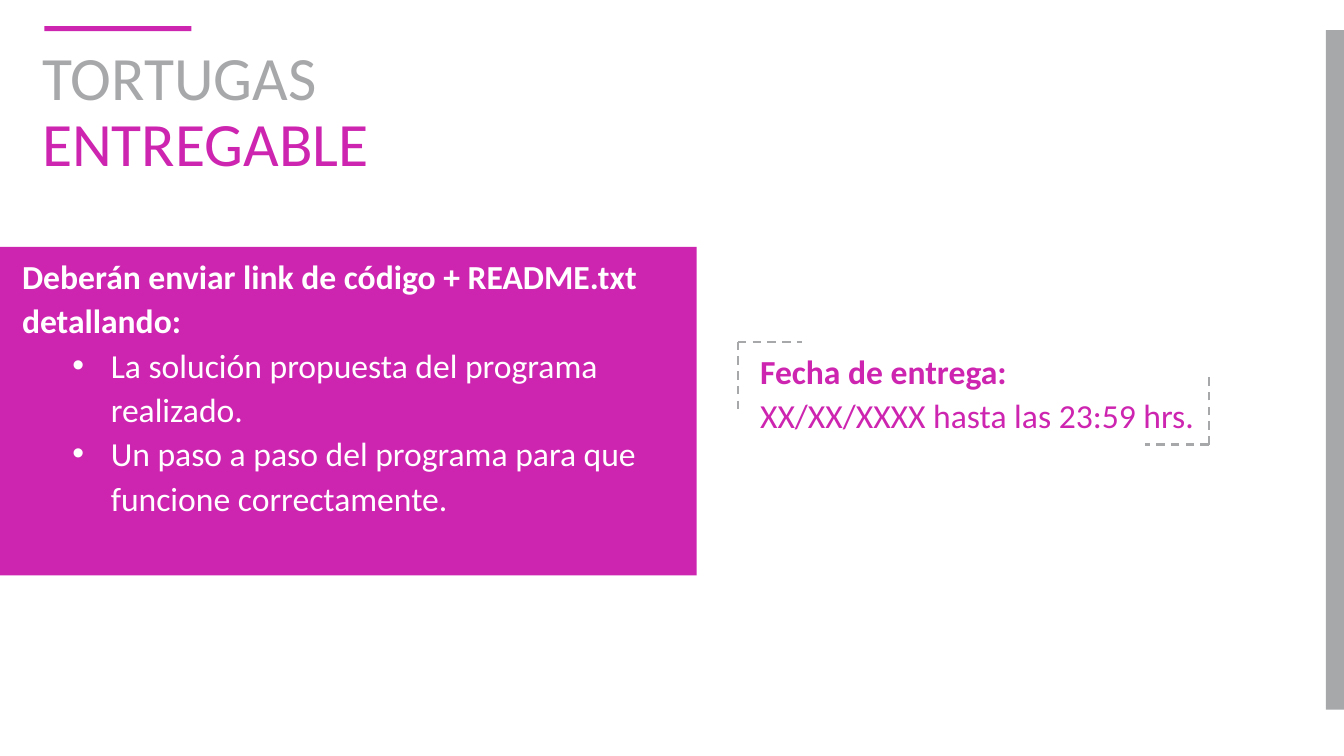
from dataclasses import dataclass

from lxml.etree import SubElement
from pptx import Presentation
from pptx.dml.color import RGBColor
from pptx.enum.dml import MSO_LINE_DASH_STYLE as DashStyle
from pptx.enum.shapes import MSO_CONNECTOR as Connector, MSO_SHAPE as Shape
from pptx.enum.text import MSO_ANCHOR as Anchor, PP_ALIGN as Align
from pptx.oxml.ns import qn
from pptx.util import Inches, Pt


@dataclass(frozen=True)
class Theme:
    """Colours, font and type sizes of the slide."""
    magenta: str = "CD25B0"
    gray: str = "A7A8AA"
    white: str = "FFFFFF"
    font: str = "Calibri"
    title_size: int = 44
    body_size: int = 24


THEME = Theme()


def add_bar(slide, left, top, width, height, color):
    """Add a plain filled rectangle."""
    bar = slide.shapes.add_shape(
        Shape.RECTANGLE, Inches(left), Inches(top), Inches(width), Inches(height))
    bar.shadow.inherit = False
    bar.fill.solid()
    bar.fill.fore_color.rgb = RGBColor.from_string(color)
    bar.line.fill.background()


def add_text(slide, left, top, width, height, text):
    """Add a wrapping text box and return its text frame."""
    box = slide.shapes.add_textbox(
        Inches(left), Inches(top), Inches(width), Inches(height))
    frame = box.text_frame
    frame.word_wrap = True
    frame.text = text
    return frame


def format_run(run, size, color, bold=False):
    """Apply the theme font to a run."""
    run.font.name = THEME.font
    run.font.size = Pt(size)
    run.font.bold = bold
    run.font.color.rgb = RGBColor.from_string(color)


def format_paragraph(paragraph, color, bold=False, margin=0.12, indent=0):
    """Format a body paragraph with its spacing and indents."""
    paragraph.alignment = Align.LEFT
    paragraph.line_spacing = 1.1
    properties = paragraph._p.get_or_add_pPr()
    properties.set("marL", str(Inches(margin)))
    properties.set("indent", str(Inches(indent)))
    for run in paragraph.runs:
        format_run(run, THEME.body_size, color, bold)


def add_bullet(paragraph, color):
    """Give a paragraph a round bullet in the given colour."""
    paragraph.level = 1
    properties = paragraph._p.get_or_add_pPr()
    SubElement(SubElement(properties, qn("a:buClr")), qn("a:srgbClr")).set("val", color)
    SubElement(properties, qn("a:buFont")).set("typeface", "Arial")
    SubElement(properties, qn("a:buChar")).set("char", "•")


def add_dashed_line(slide, start, end):
    """Add a dashed gray line between two points."""
    line = slide.shapes.add_connector(
        Connector.STRAIGHT, *(Inches(value) for value in (*start, *end)))
    line.line.color.rgb = RGBColor.from_string(THEME.gray)
    line.line.width = Pt(1.5)
    line.line.dash_style = DashStyle.DASH
    SubElement(line._element.spPr, qn("a:effectLst"))


def add_heading(slide, left, top, width, height):
    """Add the two-colour title with its accent bar above."""
    frame = add_text(slide, left, top, width, height, "TORTUGAS\vENTREGABLE")
    frame.vertical_anchor = Anchor.MIDDLE
    paragraph = frame.paragraphs[0]
    paragraph.line_spacing = 0.9
    for run, color in zip(paragraph.runs, (THEME.gray, THEME.magenta)):
        format_run(run, THEME.title_size, color)
    add_bar(slide, left + 0.12, top - 0.14, 1.46, 0.05, THEME.magenta)


def add_requirements(slide, left, top, width, height):
    """Add the magenta panel listing what must be handed in."""
    add_bar(slide, left, top, width, height, THEME.magenta)
    frame = add_text(slide, left, top, width, height - 0.52, "\n".join((
        "Deberán enviar link de código + README.txt detallando:",
        "La solución propuesta del programa realizado.",
        "Un paso a paso del programa para que funcione correctamente.")))
    introduction, *items = frame.paragraphs
    format_paragraph(introduction, THEME.white, bold=True)
    for item in items:
        format_paragraph(item, THEME.white, margin=1, indent=-0.38)
        add_bullet(item, THEME.white)


def add_deadline(slide, left, top, width, height):
    """Add the due date between two dashed corner brackets."""
    frame = add_text(slide, left, top, width + 0.22, height - 0.05,
                     "Fecha de entrega:\nXX/XX/XXXX hasta las 23:59 hrs.")
    for paragraph, bold in zip(frame.paragraphs, (True, False)):
        format_paragraph(paragraph, THEME.magenta, bold)
    corners = ((left, top, 1), (left + width, top + height, -1))
    for x, y, direction in corners:
        add_dashed_line(slide, (x, y), (x, y + 0.7 * direction))
        add_dashed_line(slide, (x, y), (x + 0.63 * direction, y))


def main():
    """Build the slide and save the presentation."""
    presentation = Presentation()
    presentation.slide_width = Inches(13.33)
    presentation.slide_height = Inches(7.5)
    slide = presentation.slides.add_slide(presentation.slide_layouts[6])
    add_bar(slide, 13.15, 0.3, 0.19, 6.74, THEME.gray)
    add_heading(slide, 0.32, 0.4, 11.5, 1.45)
    add_requirements(slide, 0, 2.45, 6.91, 3.26)
    add_deadline(slide, 7.32, 3.39, 4.67, 1.02)
    presentation.save("out.pptx")


if __name__ == "__main__":
    main()
